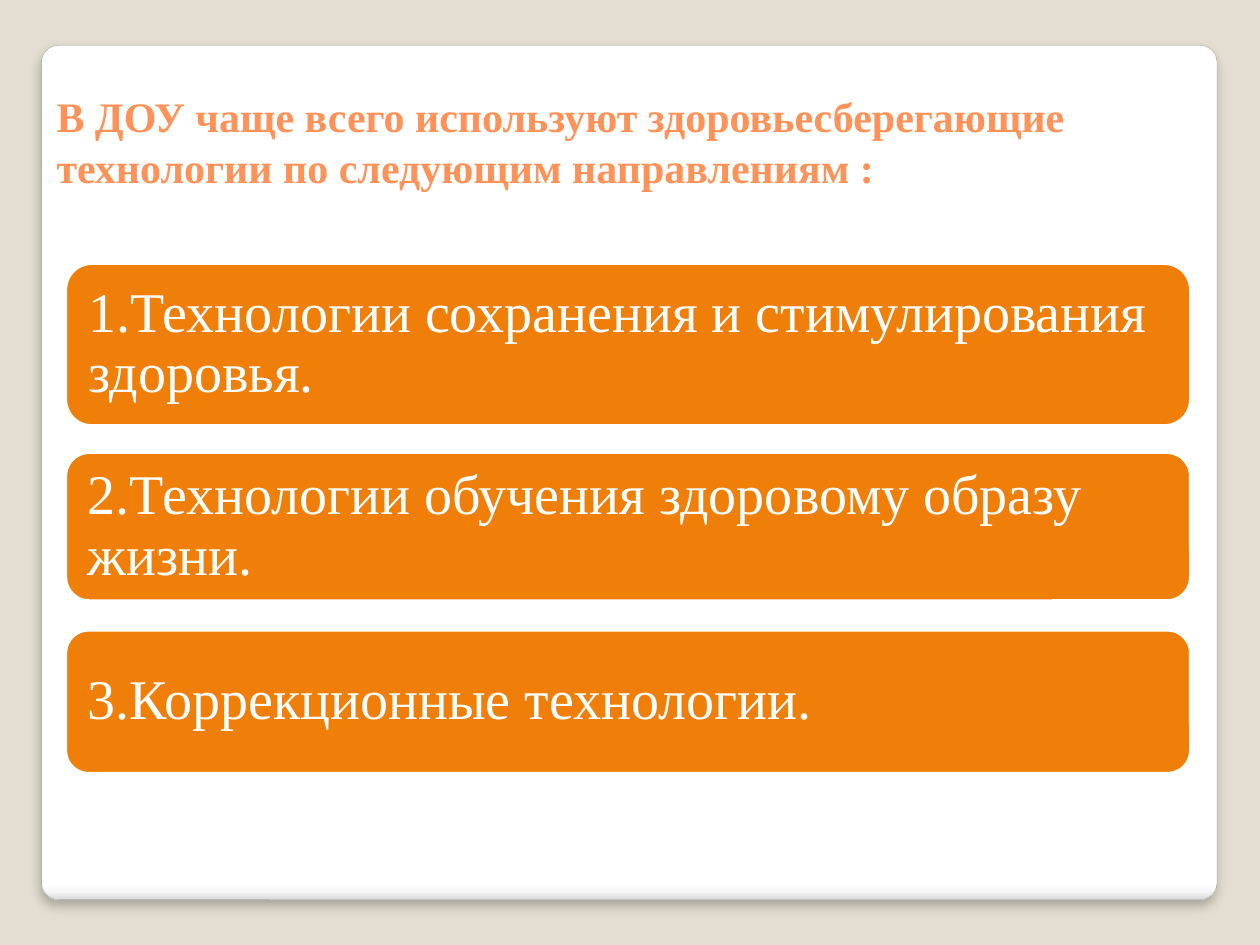
import dataclasses
import pptx
import pptx.util
import pptx.dml.color
import pptx.enum.shapes
import pptx.enum.text
import pptx.oxml
import pptx.oxml.ns

Inches = pptx.util.Inches
Pt = pptx.util.Pt
Anchor = pptx.enum.text.MSO_ANCHOR


@dataclasses.dataclass(frozen=True)
class Theme:
    back: str = "E3DED1"
    edge: str = "A4A4A4"
    head: str = "FF9258"
    bar: str = "F07F09"
    white: str = "FFFFFF"
    fade: tuple = ((0, "FFFFFF"), (98, "FFFFFF"), (99, "F7F7F7"), (100, "DADADA"))
    font: str = "Times New Roman"
    big: int = 32
    mid: int = 24


THEME = Theme()
WIDE, HIGH = 10, 7.5
LEFT, SPAN = 0.51, 8.95
ROWS = (
    ("1.Технологии сохранения и стимулирования здоровья.", 2.08, 1.31),
    ("2.Технологии обучения здоровому образу жизни.", 3.58, 1.2),
    ("3.Коррекционные технологии.", 4.99, 1.16),
)


def color(code):
    return pptx.dml.color.RGBColor.from_string(code)


def make(tag, inner):
    name = pptx.oxml.ns.nsdecls("a")
    return pptx.oxml.parse_xml(f"<a:{tag} {name}>{inner}</a:{tag}>")


def write(shape, text, size, tint, bold=False, anchor=Anchor.MIDDLE, inset=0.13, space=1):
    frame = shape.text_frame
    frame.word_wrap = True
    frame.vertical_anchor = anchor
    frame.margin_left = frame.margin_right = Inches(inset)
    frame.margin_top = frame.margin_bottom = Inches(min(inset, 0.13))
    para = frame.paragraphs[0]
    para.alignment = pptx.enum.text.PP_ALIGN.LEFT
    para.line_spacing = space
    run = para.add_run()
    run.text = text
    font = run.font
    font.name, font.size, font.bold = THEME.font, Pt(size), bold
    font.color.rgb = color(tint)


def add_box(slide, left, top, width, height, line, weight):
    kind = pptx.enum.shapes.MSO_SHAPE.ROUNDED_RECTANGLE
    box = slide.shapes.add_shape(kind, *map(Inches, (left, top, width, height)))
    box.shadow.inherit = False
    box.line.color.rgb = color(line)
    box.line.width = Pt(weight)
    return box


def add_panel(slide):
    panel = add_box(slide, 0.33, 0.36, 9.33, 6.78, THEME.edge, 0.16)
    panel.adjustments[0] = 0.02
    panel.fill.gradient()
    panel.fill.gradient_angle = 270
    props = panel.element.spPr
    old = props.find(".//" + pptx.oxml.ns.qn("a:gsLst"))
    stops = "".join(
        f'<a:gs pos="{spot * 1000}"><a:srgbClr val="{tint}"/></a:gs>'
        for spot, tint in THEME.fade
    )
    old.getparent().replace(old, make("gsLst", stops))
    shade = (
        f'<a:outerShdw blurRad="{Pt(6)}" dist="{Pt(4)}" dir="5400000" rotWithShape="0">'
        '<a:srgbClr val="000000"><a:alpha val="25000"/></a:srgbClr></a:outerShdw>'
    )
    flat = props.find(pptx.oxml.ns.qn("a:effectLst"))
    props.replace(flat, make("effectLst", shade))


def add_title(slide, text):
    box = slide.shapes.add_textbox(*map(Inches, (0.35, 0.52, 9.29, 1.1)))
    write(box, text, THEME.mid, THEME.head, bold=True, anchor=Anchor.BOTTOM, inset=0.1)


def add_bar(slide, text, top, height):
    bar = add_box(slide, LEFT, top, SPAN, height, THEME.white, 3.35)
    bar.fill.solid()
    bar.fill.fore_color.rgb = color(THEME.bar)
    write(bar, text, THEME.big, THEME.white, space=0.9)


def main():
    deck = pptx.Presentation()
    deck.slide_width, deck.slide_height = Inches(WIDE), Inches(HIGH)
    slide = deck.slides.add_slide(deck.slide_layouts[6])
    slide.background.fill.solid()
    slide.background.fill.fore_color.rgb = color(THEME.back)
    add_panel(slide)
    add_title(slide, "В ДОУ чаще всего используют здоровьесберегающие технологии по следующим направлениям :")
    for text, top, height in ROWS:
        add_bar(slide, text, top, height)
    deck.save("out.pptx")


if __name__ == "__main__":
    main()
